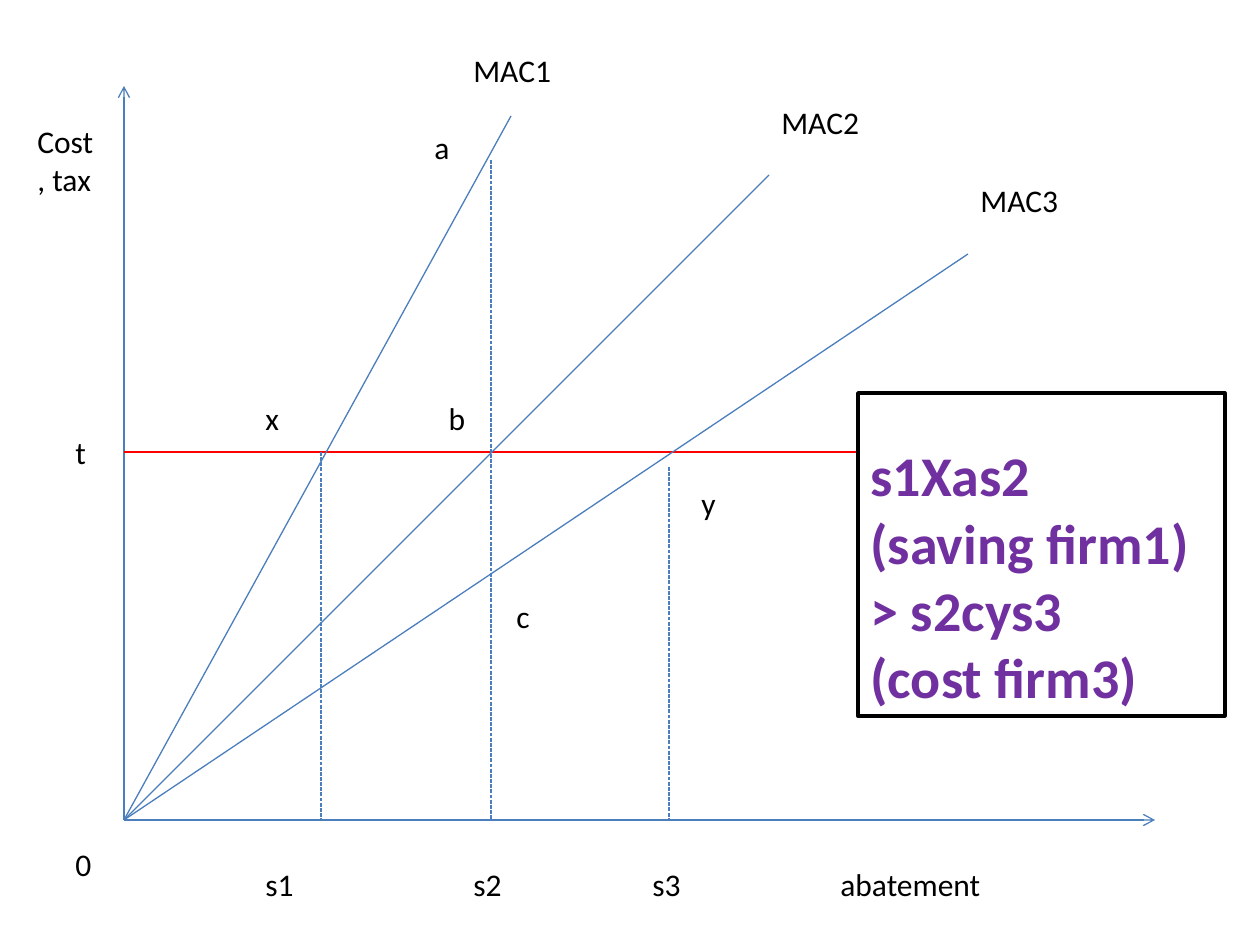
from dataclasses import dataclass

from lxml import etree
from pptx import Presentation
from pptx import util as u
from pptx.dml.color import RGBColor
from pptx.enum import dml, shapes, text
from pptx.oxml.ns import qn

PX = 914400 / 126  # EMU in one px


def px(n):
    return u.Emu(round(n * PX))


@dataclass(frozen=True)
class Theme:
    font: str = "Calibri"
    label_size: int = 18
    note_size: int = 32
    line_width: float = 0.75
    frame_width: int = 2
    curve: RGBColor = RGBColor(0x4B, 0x7E, 0xBC)
    tax: RGBColor = RGBColor(0xFF, 0, 0)
    ink: RGBColor = RGBColor(0, 0, 0)
    paper: RGBColor = RGBColor(0xFF, 0xFF, 0xFF)
    note: RGBColor = RGBColor(0x70, 0x30, 0xA0)


class Diagram:
    def __init__(self, s, theme):
        self.s, self.theme = s, theme

    def line(self, start, end, color=None, arrow=False, dashed=False):
        sp = self.s.shapes.add_connector(
            shapes.MSO_CONNECTOR.STRAIGHT, *map(px, start + end))
        sp.line.color.rgb = color or self.theme.curve
        sp.line.width = u.Pt(self.theme.line_width)
        if dashed:
            sp.line.dash_style = dml.MSO_LINE.SQUARE_DOT
        if arrow:
            ln = sp.line._get_or_add_ln()
            etree.SubElement(ln, qn("a:tailEnd"), type="arrow")
        etree.SubElement(sp._element.spPr, qn("a:effectLst"))

    def set_text(self, sp, lines, size, color, bold=False,
                 anchor=text.MSO_ANCHOR.TOP):
        tf = sp.text_frame
        frame = {"word_wrap": True, "vertical_anchor": anchor,
                 "auto_size": text.MSO_AUTO_SIZE.SHAPE_TO_FIT_TEXT}
        for name, value in frame.items():
            setattr(tf, name, value)
        font = {"name": self.theme.font, "size": u.Pt(size), "bold": bold}
        for i, line in enumerate(lines):
            p = tf.add_paragraph() if i else tf.paragraphs[0]
            p.alignment = text.PP_ALIGN.LEFT
            r = p.add_run()
            r.text = line
            for name, value in font.items():
                setattr(r.font, name, value)
            r.font.color.rgb = color

    def label(self, words, x, y, w, h=50):
        sp = self.s.shapes.add_textbox(*map(px, (x, y, w, h)))
        self.set_text(sp, [words], self.theme.label_size, self.theme.ink)

    def note(self, lines, x, y, w, h):
        sp = self.s.shapes.add_shape(
            shapes.MSO_SHAPE.RECTANGLE, *map(px, (x, y, w, h)))
        sp.shadow.inherit = False
        sp.fill.solid()
        sp.fill.fore_color.rgb = self.theme.paper
        sp.line.color.rgb = self.theme.ink
        sp.line.width = u.Pt(self.theme.frame_width)
        self.set_text(sp, lines, self.theme.note_size, self.theme.note,
                      bold=True, anchor=text.MSO_ANCHOR.BOTTOM)
        # Keep the frame taller than its text
        sp.text_frame.auto_size = text.MSO_AUTO_SIZE.NONE


def main():
    prs = Presentation()
    prs.slide_width, prs.slide_height = px(1260), px(945)
    theme = Theme()
    d = Diagram(prs.slides.add_slide(prs.slide_layouts[6]), theme)

    x0, y0, tax_y = 124, 820, 452
    origin = (x0, y0)

    # Axes and tax level
    for end in ((x0, 86), (1155, y0)):
        d.line(origin, end, arrow=True)
    d.line((x0, tax_y), (1106, tax_y), theme.tax)

    # Marginal abatement cost curves
    for end in ((511, 116), (769, 175), (968, 254)):
        d.line(origin, end)

    # Drop lines to s1, s2 and s3
    for x, top in ((321, tax_y), (491, 160), (669, 467)):
        d.line((x, top), (x, y0), dashed=True)

    # Result box
    d.note(["s1Xas2", "(saving firm1) > s2cys3", "(cost firm3)"],
           858, 393, 367, 323)

    # Axis labels
    d.label("Cost, tax", 25, 116, 87, 89)
    d.label("t", 63, 427, 49)
    d.label("0", 63, 839, 91)
    for words, x, w in (("s1", 253, 118), ("s2", 461, 84),
                        ("s3", 640, 100), ("abatement", 828, 277)):
        d.label(words, x, 859, w)

    # Curve and point labels
    for words, x, y, w in (("MAC1", 461, 45, 179), ("MAC2", 769, 97, 139),
                           ("MAC3", 968, 175, 139), ("x", 253, 393, 64),
                           ("a", 422, 122, 39), ("b", 441, 393, 20),
                           ("y", 689, 478, 49), ("c", 504, 591, 47)):
        d.label(words, x, y, w)

    prs.save("out.pptx")


if __name__ == "__main__":
    main()
